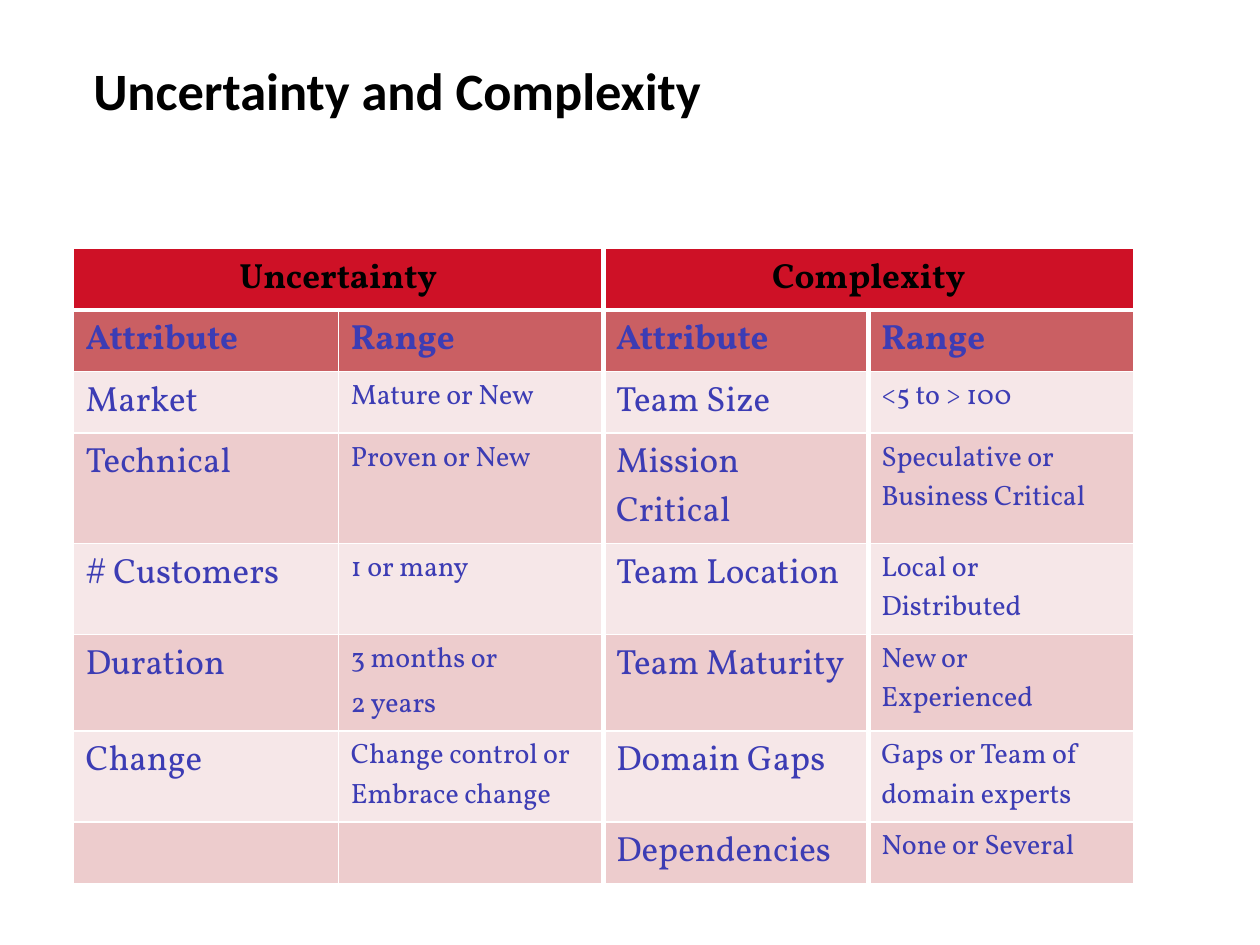
from dataclasses import dataclass

from lxml import etree
from pptx import Presentation
from pptx.dml.color import RGBColor
from pptx.enum.text import MSO_ANCHOR, PP_ALIGN
from pptx.oxml.ns import qn
from pptx.slide import Slide
from pptx.table import Table, _Cell
from pptx.util import Emu, Inches, Pt

CENTER, LEFT = PP_ALIGN.CENTER, PP_ALIGN.LEFT
MIDDLE = MSO_ANCHOR.MIDDLE
SLIDE_WIDTH, SLIDE_HEIGHT = Inches(10), Inches(7.5)


@dataclass(frozen=True)
class Theme:
    title_font: str = "Calibri"
    table_font: str = "Vollkorn"
    title_size: int = 30
    large: int = 20
    small: int = 16
    black: str = "000000"
    text: str = "3C3CB4"
    border: str = "FFFFFF"
    group_fill: str = "CE1126"
    heading_fill: str = "CA5F63"
    bands: tuple[str, str] = ("F6E7E8", "EDCCCD")
    thin: int = 1
    thick: int = 3


@dataclass(frozen=True)
class CellStyle:
    fill: str
    color: str
    size: int
    bold: bool = False
    alignment: PP_ALIGN = LEFT


@dataclass(frozen=True)
class Factor:
    attribute: str
    range: str


THEME = Theme()
GROUPS = ("Uncertainty", "Complexity")
HEADING = Factor("Attribute", "Range")
UNCERTAINTY = (
    Factor("Market", "Mature or New"),
    Factor("Technical", "Proven or New"),
    Factor("# Customers", "1 or many"),
    Factor("Duration", "3 months or\n2 years"),
    Factor("Change", "Change control or Embrace change"),
    Factor("", ""),
)
COMPLEXITY = (
    Factor("Team Size", "<5 to > 100"),
    Factor("Mission Critical", "Speculative or Business Critical"),
    Factor("Team Location", "Local or Distributed"),
    Factor("Team Maturity", "New or Experienced"),
    Factor("Domain Gaps", "Gaps or Team of domain experts"),
    Factor("Dependencies", "None or Several"),
)
COLUMNS = 2 * len(GROUPS)
ROWS = 2 + len(COMPLEXITY)


def add_title(slide: Slide, text: str) -> None:
    title = slide.shapes.title
    title.left, title.top = int(0.064 * SLIDE_WIDTH), 0
    title.width, title.height = int(0.936 * SLIDE_WIDTH), int(0.19 * SLIDE_HEIGHT)
    title.text_frame.text = text
    title.text_frame.vertical_anchor = MIDDLE
    paragraph = title.text_frame.paragraphs[0]
    paragraph.alignment = LEFT
    paragraph.font.name = THEME.title_font
    paragraph.font.size = Pt(THEME.title_size)
    paragraph.font.bold = True
    paragraph.font.color.rgb = RGBColor.from_string(THEME.black)


def fill_cell(cell: _Cell, text: str, style: CellStyle) -> None:
    cell.fill.solid()
    cell.fill.fore_color.rgb = RGBColor.from_string(style.fill)
    cell.text_frame.text = text
    for index, paragraph in enumerate(cell.text_frame.paragraphs):
        paragraph.alignment = style.alignment
        if index:
            paragraph.space_before = Pt(0.2 * style.size)
        paragraph.font.name = THEME.table_font
        paragraph.font.size = Pt(style.size)
        paragraph.font.bold = style.bold
        paragraph.font.color.rgb = RGBColor.from_string(style.color)


def set_borders(cell: _Cell, row: int, column: int) -> None:
    """Thick lines part the group row, the two groups and the last column."""

    def vertical(line: int) -> int:
        thick = line == 2 or (line == 3 and row > 0)
        return THEME.thick if thick else THEME.thin

    def horizontal(line: int) -> int:
        return THEME.thick if line == 1 else THEME.thin

    widths = {
        "a:lnL": vertical(column),
        "a:lnR": vertical(column + (2 if cell.is_merge_origin else 1)),
        "a:lnT": horizontal(row),
        "a:lnB": horizontal(row + 1),
    }
    properties = cell._tc.get_or_add_tcPr()
    for position, (tag, width) in enumerate(widths.items()):
        line = etree.Element(qn(tag), w=str(Pt(width)))
        solid = etree.SubElement(line, qn("a:solidFill"))
        etree.SubElement(solid, qn("a:srgbClr"), val=THEME.border)
        properties.insert(position, line)


def fill_table(table: Table) -> None:
    group_style = CellStyle(THEME.group_fill, THEME.black, THEME.large, True, CENTER)
    heading_style = CellStyle(THEME.heading_fill, THEME.text, THEME.large, True)
    for group, (name, factors) in enumerate(zip(GROUPS, (UNCERTAINTY, COMPLEXITY))):
        first = 2 * group
        table.cell(0, first).merge(table.cell(0, first + 1))
        fill_cell(table.cell(0, first), name, group_style)
        fill_cell(table.cell(1, first), HEADING.attribute, heading_style)
        fill_cell(table.cell(1, first + 1), HEADING.range, heading_style)
        for index, factor in enumerate(factors):
            band = THEME.bands[index % 2]
            fill_cell(table.cell(index + 2, first), factor.attribute,
                      CellStyle(band, THEME.text, THEME.large))
            fill_cell(table.cell(index + 2, first + 1), factor.range,
                      CellStyle(band, THEME.text, THEME.small))
    for row in range(ROWS):
        for column in range(COLUMNS):
            set_borders(table.cell(row, column), row, column)


def add_factor_table(slide: Slide) -> None:
    row_height = Inches(0.41)
    frame = slide.shapes.add_table(
        ROWS, COLUMNS, Emu(int(0.058 * SLIDE_WIDTH)), Emu(int(0.263 * SLIDE_HEIGHT)),
        Emu(int(0.842 * SLIDE_WIDTH)), Emu(ROWS * row_height))
    frame.table.first_row = False
    frame.table.horz_banding = False
    fill_table(frame.table)


def main() -> None:
    presentation = Presentation()
    presentation.slide_width, presentation.slide_height = SLIDE_WIDTH, SLIDE_HEIGHT
    title_only = presentation.slide_layouts[5]
    slide = presentation.slides.add_slide(title_only)
    add_title(slide, "Uncertainty and Complexity")
    add_factor_table(slide)
    presentation.save("out.pptx")


if __name__ == "__main__":
    main()
